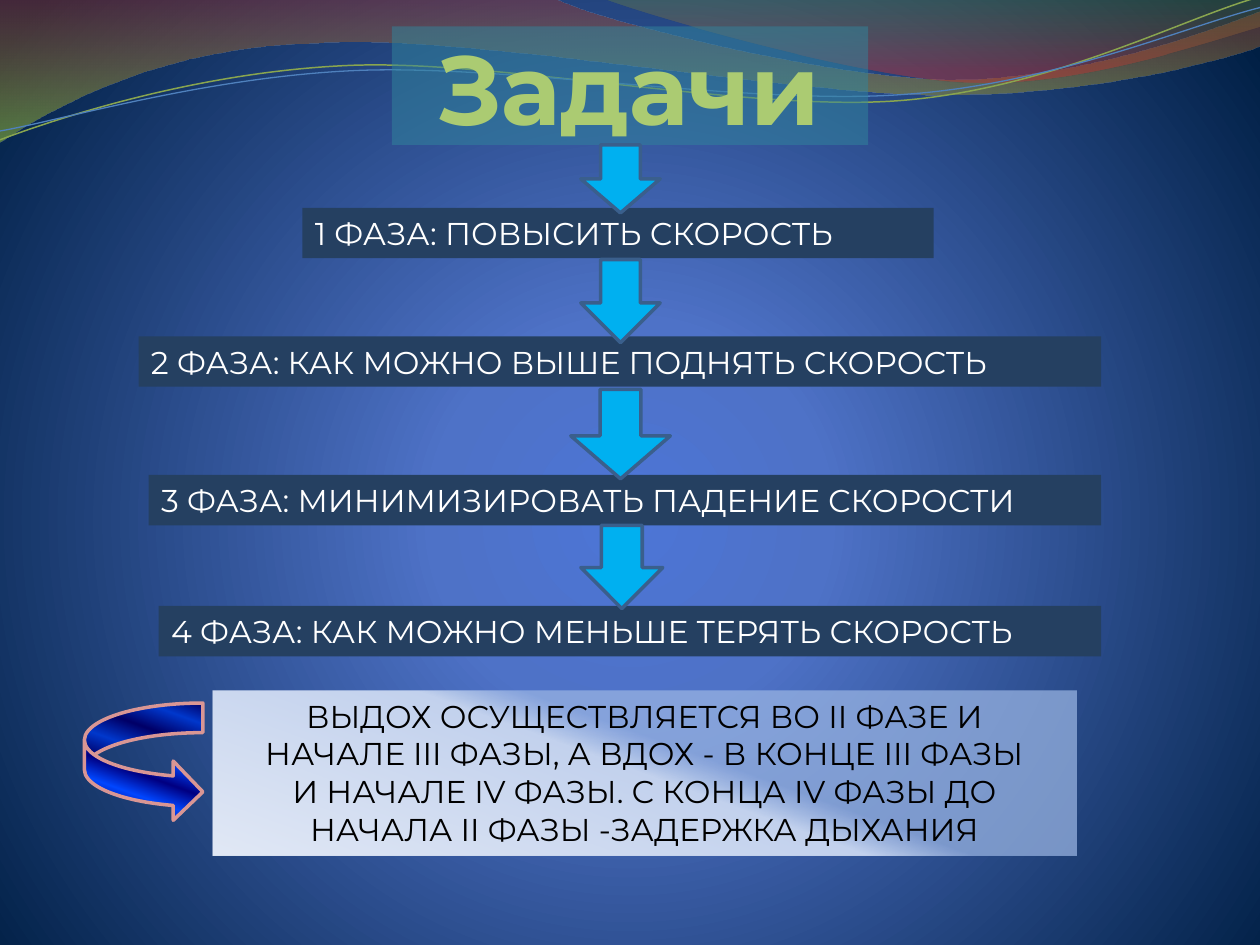
"""Build the slide about the tasks of the four phases."""
from typing import NamedTuple

from lxml import etree
from pptx import Presentation
from pptx.dml.color import RGBColor
from pptx.enum.shapes import MSO_SHAPE
from pptx.enum.text import MSO_ANCHOR, MSO_AUTO_SIZE, PP_ALIGN
from pptx.oxml.ns import qn
from pptx.util import Inches, Pt

RECTANGLE = MSO_SHAPE.RECTANGLE
DOWN_ARROW = MSO_SHAPE.DOWN_ARROW
CURVED_ARROW = MSO_SHAPE.CURVED_RIGHT_ARROW
LEFT, CENTER = PP_ALIGN.LEFT, PP_ALIGN.CENTER
TOP, BOTTOM = MSO_ANCHOR.TOP, MSO_ANCHOR.BOTTOM
FIT_SHAPE, NO_FIT = MSO_AUTO_SIZE.SHAPE_TO_FIT_TEXT, MSO_AUTO_SIZE.NONE

FONT = "Montserrat"
WHITE = RGBColor(0xFF, 0xFF, 0xFF)
BLACK = RGBColor(0x00, 0x00, 0x00)
TEAL = RGBColor(0x31, 0x85, 0x9C)
LIME = RGBColor(0xAB, 0xCB, 0x72)
NAVY = RGBColor(0x25, 0x40, 0x61)
SKY = RGBColor(0x00, 0xB0, 0xF0)
ARROW_EDGE = RGBColor(0x3A, 0x5F, 0x8C)
PINK = RGBColor(0xD9, 0x96, 0x94)
OLIVE = RGBColor(0x89, 0xA5, 0x4F)
BLUE = RGBColor(0x4F, 0x81, 0xBD)
RED = RGBColor(0x97, 0x33, 0x30)
GREEN = RGBColor(0x95, 0xC2, 0x38)
MOSS = RGBColor(0x76, 0x95, 0x37)
CRIMSON = RGBColor(0xBE, 0x33, 0x30)
GLOW = RGBColor(0x4D, 0x75, 0xD6)
ROYAL = RGBColor(0x4E, 0x72, 0xC7)
MIDNIGHT = RGBColor(0x00, 0x1F, 0x44)
DEEP_BLUE = RGBColor(0x00, 0x00, 0x82)
BRIGHT_BLUE = RGBColor(0x00, 0x47, 0xFF)
NOTE_BLUE = RGBColor(0x9A, 0xB5, 0xE4)
NOTE_MIDDLE = RGBColor(0xC2, 0xD1, 0xED)
NOTE_LIGHT = RGBColor(0xE1, 0xE8, 0xF5)


class Box(NamedTuple):
    left: float
    top: float
    width: float
    height: float


class Stop(NamedTuple):
    position: int
    color: RGBColor
    opacity: int = 100


class Phase(NamedTuple):
    box: Box
    text: str


class Wave(NamedTuple):
    segments: list
    stops: list = []
    line: RGBColor | None = None
    width: float = 0


PHASES = [
    Phase(Box(2.4, 1.65, 5.01, 0.4), "1 ФАЗА: ПОВЫСИТЬ СКОРОСТЬ"),
    Phase(Box(1.1, 2.67, 7.64, 0.4), "2 ФАЗА: КАК МОЖНО ВЫШЕ ПОДНЯТЬ СКОРОСТЬ"),
    Phase(Box(1.18, 3.77, 7.56, 0.4), "3 ФАЗА: МИНИМИЗИРОВАТЬ ПАДЕНИЕ СКОРОСТИ"),
    Phase(Box(1.26, 4.81, 7.48, 0.4), "4 ФАЗА: КАК МОЖНО МЕНЬШЕ ТЕРЯТЬ СКОРОСТЬ"),
]
ARROWS = [
    Box(4.61, 1.15, 0.63, 0.54),
    Box(4.61, 2.06, 0.63, 0.66),
    Box(4.53, 3.09, 0.79, 0.71),
    Box(4.61, 4.17, 0.65, 0.66),
]
WIDE_ARROW = ARROWS[2]
NOTE = ("ВЫДОХ ОСУЩЕСТВЛЯЕТСЯ ВО II ФАЗЕ И\n"
        "НАЧАЛЕ III ФАЗЫ, А ВДОХ - В КОНЦЕ III ФАЗЫ\n"
        "И НАЧАЛЕ IV ФАЗЫ. С КОНЦА IV ФАЗЫ ДО\n"
        "НАЧАЛА II ФАЗЫ -ЗАДЕРЖКА ДЫХАНИЯ")
WAVES = [
    Wave([(0, 0), (4.4, -0.01), (4.76, 0.17, 6.64, 0.63, 7.58, 0.63),
          (8.53, 0.63, 9.58, 0.26, 10, 0.09), (10.01, 0.36),
          (9.83, 0.44, 8.7, 0.76, 7.46, 0.75), (6.22, 0.75, 3.82, 0.28, 2.57, 0.34),
          (1.29, 0.36, 0.46, 0.83, -0.01, 1.13)],
         stops=[Stop(0, RED, 45), Stop(100, GREEN, 55)]),
    Wave([(4.79, -0.01), (5.09, 0.11, 6.82, 0.62, 7.69, 0.65),
          (8.56, 0.69, 9.61, 0.32, 10, 0.21), (10, 0)],
         stops=[Stop(0, MOSS, 30), Stop(80, CRIMSON, 45)]),
    Wave([(0, 1.11), (0.48, 0.93, 1.58, 0.57, 2.77, 0.52),
          (3.95, 0.47, 5.93, 0.89, 7.13, 0.8), (8.33, 0.71, 9.38, 0.15, 9.98, -0.02)],
         line=OLIVE, width=0.85),
    Wave([(0, 1.04), (0.47, 0.96, 1.64, 0.61, 2.83, 0.56),
          (4.03, 0.51, 5.97, 0.84, 7.17, 0.75), (8.36, 0.67, 9.41, 0.21, 10, 0.06)],
         line=BLUE, width=0.75),
]


def set_opacity(color_element, opacity: int) -> None:
    etree.SubElement(color_element, qn("a:alpha"), val=str(opacity * 1000))


def set_gradient(fill, parent, stops: list[Stop], angle: int | None = None) -> None:
    fill.background()
    gradient = etree.Element(qn("a:gradFill"), rotWithShape="1")
    stop_list = etree.SubElement(gradient, qn("a:gsLst"))
    for stop in stops:
        element = etree.SubElement(stop_list, qn("a:gs"), pos=str(stop.position * 1000))
        color = etree.SubElement(element, qn("a:srgbClr"), val=str(stop.color))
        if stop.opacity < 100:
            set_opacity(color, stop.opacity)
    if angle is None:
        circle = etree.SubElement(gradient, qn("a:path"), path="circle")
        etree.SubElement(circle, qn("a:fillToRect"), l="10000", t="110000", r="10000", b="100000")
    else:
        etree.SubElement(gradient, qn("a:lin"), ang=str(angle * 60000), scaled="0")
    parent.replace(parent.find(qn("a:noFill")), gradient)


def bend_segments(outline, segments: list) -> None:
    lines = iter(outline.findall(qn("a:lnTo")))
    for segment in segments:
        if len(segment) == 2:
            next(lines)
            continue
        curve = etree.Element(qn("a:cubicBezTo"))
        first, second, end = next(lines), next(lines), next(lines)
        first.addprevious(curve)
        for line in (first, second, end):
            curve.append(line[0])
            outline.remove(line)


def add_wave(slide, wave: Wave, number: int) -> None:
    points = [(Inches(x), Inches(y)) for segment in wave.segments
              for x, y in zip(segment[::2], segment[1::2])]
    builder = slide.shapes.build_freeform(*points[0])
    builder.add_line_segments(points[1:], close=bool(wave.stops))
    shape = builder.convert_to_shape()
    shape.shadow.inherit = False
    bend_segments(shape.element.find(".//" + qn("a:pathLst"))[0], wave.segments[1:])
    if wave.stops:
        set_gradient(shape.fill, shape.element.spPr, wave.stops, 90)
        shape.line.fill.background()
    else:
        shape.fill.background()
        shape.line.color.rgb = wave.line
        shape.line.width = Pt(wave.width)
    shape.element.find(".//" + qn("p:cNvPr")).set("id", str(100 + number))
    slide.slide_layout.slide_master.shapes.element.insert(2 + number, shape.element)


def add_plain_shape(slide, kind, box: Box, color: RGBColor, line: RGBColor | None = None):
    shape = slide.shapes.add_shape(kind, *map(Inches, box))
    shape.shadow.inherit = False
    shape.fill.solid()
    shape.fill.fore_color.rgb = color
    if line is None:
        shape.line.fill.background()
    else:
        shape.line.color.rgb = line
        shape.line.width = Pt(2)
    return shape


def write_text(shape, text: str, *, color: RGBColor, size: int = 18, bold: bool = False,
               align=LEFT, anchor=TOP, fit=FIT_SHAPE) -> None:
    frame = shape.text_frame
    frame.word_wrap, frame.auto_size, frame.vertical_anchor = True, fit, anchor
    paragraph = frame.paragraphs[0]
    paragraph.text, paragraph.alignment = text, align
    for run in paragraph.runs:
        run.font.name, run.font.size, run.font.bold = FONT, Pt(size), bold
        run.font.color.rgb = color


def place_title(slide) -> None:
    title = slide.shapes.title
    title.left, title.top, title.width, title.height = map(Inches, Box(3.11, 0.21, 3.78, 0.94))
    title.fill.solid()
    title.fill.fore_color.rgb = TEAL
    set_opacity(title.element.spPr.find(".//" + qn("a:srgbClr")), 51)
    write_text(title, "Задачи", color=LIME, size=56, bold=True, align=CENTER,
               anchor=BOTTOM, fit=NO_FIT)
    frame = title.text_frame
    frame.margin_left = frame.margin_top = frame.margin_bottom = 0
    frame.margin_right = Inches(0.02)


def main() -> None:
    presentation = Presentation()
    presentation.slide_width, presentation.slide_height = Inches(10), Inches(7.5)
    slide = presentation.slides.add_slide(presentation.slide_layouts[5])
    set_gradient(slide.background.fill, slide.element.find(".//" + qn("p:bgPr")),
                 [Stop(0, GLOW), Stop(25, ROYAL), Stop(100, MIDNIGHT)])
    for number, wave in enumerate(WAVES):
        add_wave(slide, wave, number)
    place_title(slide)

    note = add_plain_shape(slide, RECTANGLE, Box(1.69, 5.48, 6.85, 1.31), NOTE_LIGHT)
    set_gradient(note.fill, note.element.spPr,
                 [Stop(42, NOTE_BLUE, 72), Stop(50, NOTE_MIDDLE), Stop(100, NOTE_LIGHT)], 110)
    write_text(note, NOTE, color=BLACK, align=CENTER)
    curved_arrow = add_plain_shape(slide, CURVED_ARROW, Box(0.67, 5.58, 0.94, 0.94), SKY, PINK)
    set_gradient(curved_arrow.fill, curved_arrow.element.spPr,
                 [Stop(position, (DEEP_BLUE, BRIGHT_BLUE)[index % 2])
                  for index, position in enumerate((0, 13, 28, 43, 58, 72, 87, 100))], 110)

    for phase in PHASES:
        write_text(add_plain_shape(slide, RECTANGLE, phase.box, NAVY), phase.text, color=WHITE)
    for box in ARROWS:
        arrow = add_plain_shape(slide, DOWN_ARROW, box, SKY, ARROW_EDGE)
        if box == WIDE_ARROW:
            arrow.adjustments[0], arrow.adjustments[1] = 0.41, 0.48
    presentation.save("out.pptx")


if __name__ == "__main__":
    main()
